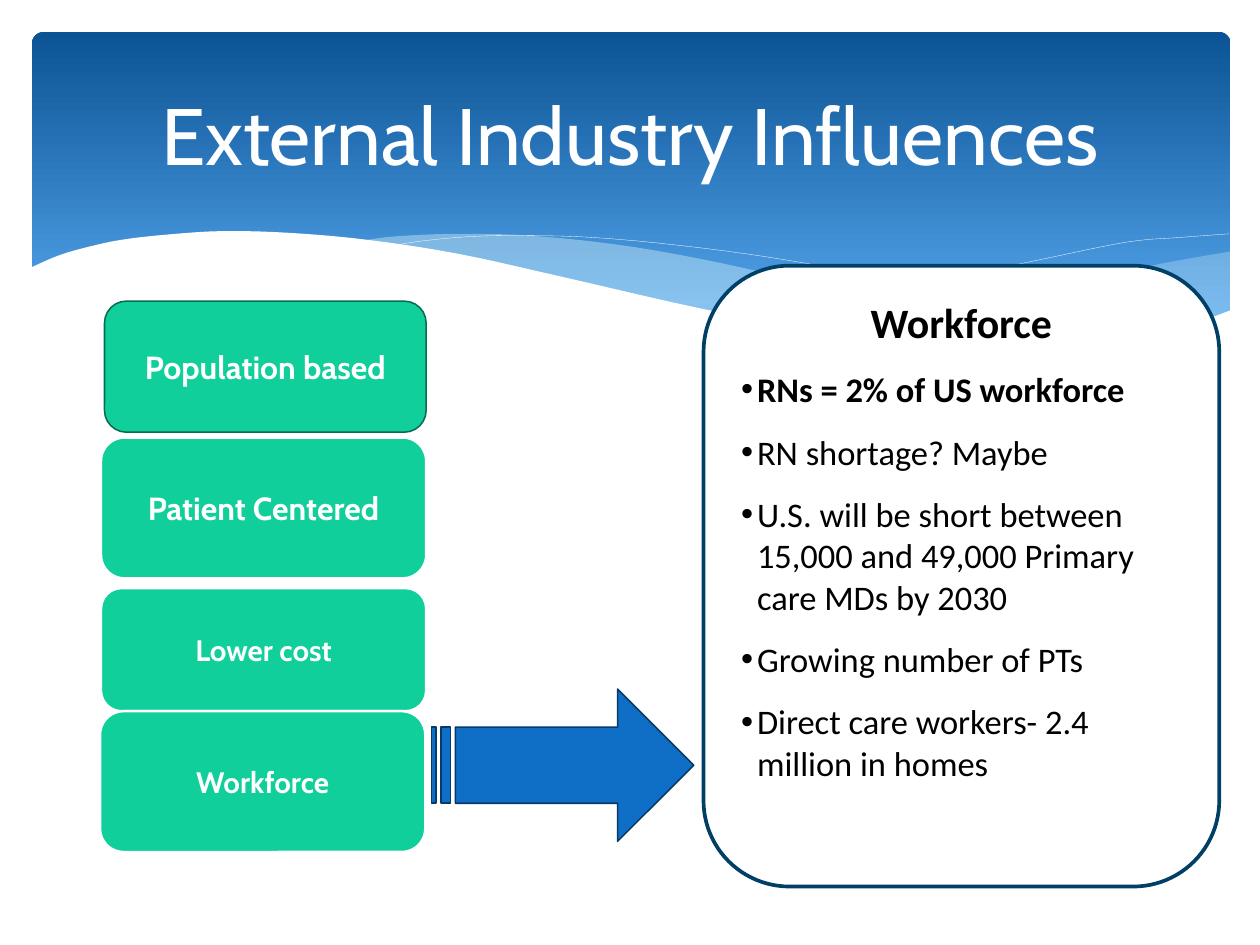
from dataclasses import dataclass

from lxml import etree
from pptx import Presentation
from pptx import util as u
from pptx.dml import color
from pptx.enum import shapes, text
from pptx.oxml import ns


@dataclass(frozen=True)
class Theme:
    heading_font: str = "Cabin"
    body_font: str = "Calibri"
    white: str = "FFFFFF"
    black: str = "000000"
    banner_top: str = "0B5394"
    banner_bottom: str = "59AAF2"
    wave: str = "DBF5F9"
    card: str = "10CF9B"
    card_edge: str = "086C51"
    arrow: str = "0F6FC6"
    arrow_edge: str = "083A67"
    panel_edge: str = "004067"
    title_size: float = 65
    panel_title_size: float = 34
    bullet_size: float = 28
    card_size: float = 26
    small_card_size: float = 24
    paragraph_gap: float = 17.1


THEME = Theme()
SHAPE = shapes.MSO_SHAPE
CENTER = text.PP_ALIGN.CENTER
MIDDLE = text.MSO_ANCHOR.MIDDLE
FRAME_FORMAT = {
    "word_wrap": True,
    "margin_left": u.Inches(0.14),
    "margin_right": u.Inches(0.14),
    "margin_top": u.Inches(0.07),
    "margin_bottom": u.Inches(0.07),
}

RIGHT_WAVE = [
    [(13.55, 0.23), (12.76, 0.37), (11.91, 0.56), (11.12, 0.76), (10.04, 0.99), (9.08, 1.16)],
    [(9.08, 1.16), (9.89, 1.27), (10.78, 1.33), (11.54, 1.33), (12.19, 1.28),
     (12.77, 1.19), (13.17, 1.08), (13.55, 0.9)],
]
MIDDLE_WAVE = [
    [(12.37, 1.27), (11.15, 1.09), (9.71, 0.8), (8.61, 0.54), (7.56, 0.31), (6.62, 0.15),
     (5.64, 0.05), (4.81, 0.03), (4.12, 0.06), (3.74, 0.11)],
    [(3.74, 0.11), (4.54, 0.22), (5.42, 0.39), (6.65, 0.68), (7.98, 0.97), (9.13, 1.18),
     (10.13, 1.3), (11.15, 1.35), (11.87, 1.33), (12.37, 1.27)],
]
LEFT_CREST = [
    [(4.07, 0.17), (4.44, 0.11), (5, 0.06), (5.59, 0.05), (6.34, 0.07), (7.24, 0.15),
     (8.32, 0.29), (9.56, 0.51), (10.98, 0.82), (12.57, 1.25)],
]
RIGHT_CREST = [
    [(8.39, 1.04), (9.23, 0.82), (10.3, 0.56), (11.56, 0.29), (12.41, 0.12), (13, 0.07),
     (13.54, 0.03)],
]
FRONT_WAVE = [
    [(13.57, 0.89), (13.04, 1.08), (12.45, 1.22), (11.76, 1.3), (10.95, 1.32), (10, 1.26),
     (8.88, 1.12), (7.56, 0.87), (6.03, 0.52), (4.86, 0.26), (3.83, 0.1), (2.94, 0.02),
     (2.18, 0), (1.55, 0.04), (1.03, 0.1), (0.62, 0.19), (0.32, 0.28), (0, 0.42)],
    [(0, 2.07), (13.57, 2.07)],
]


def apply(target, values):
    for name, value in values.items():
        setattr(target, name, value)


def rgb(value):
    return color.RGBColor.from_string(value)


def inches(box):
    return [u.Inches(length) for length in box]


def paint(shape, fill=None, line=None, width=0.25):
    shape.shadow.inherit = False
    if fill:
        shape.fill.solid()
        shape.fill.fore_color.rgb = rgb(fill)
    else:
        shape.fill.background()
    if line:
        shape.line.color.rgb = rgb(line)
        shape.line.width = u.Pt(width)
    else:
        shape.line.fill.background()


def add_box(slide, kind, box, **style):
    shape = slide.shapes.add_shape(kind, *inches(box))
    paint(shape, **style)
    return shape


def write(paragraph, words, font, size, ink, bold=False, **layout):
    apply(paragraph, layout)
    run = paragraph.add_run()
    run.text = words
    apply(run.font, {"name": font, "size": u.Pt(size), "bold": bold})
    run.font.color.rgb = rgb(ink)


def smooth(points, steps=5):
    padded = [points[0], *points, points[-1]]
    curve = [points[0]]
    for before, start, end, after in zip(padded, padded[1:], padded[2:], padded[3:]):
        for step in range(1, steps + 1):
            t = step / steps
            curve.append(tuple(
                (2 * b + (c - a) * t + (2 * a - 5 * b + 4 * c - d) * t ** 2
                 + (3 * b - a - 3 * c + d) * t ** 3) / 2
                for a, b, c, d in zip(before, start, end, after)))
    return curve


def add_wave(slide, box, sections, closed=True, opacity=None, **style):
    left, top = box[:2]
    points = [(u.Inches(left + x), u.Inches(top + y))
              for section in sections for x, y in smooth(section)]
    builder = slide.shapes.build_freeform(*points[0])
    builder.add_line_segments(points[1:], close=closed)
    shape = builder.convert_to_shape()
    paint(shape, **style)
    if opacity:
        tint = shape.fill._xPr.find(".//" + ns.qn("a:srgbClr"))
        etree.SubElement(tint, ns.qn("a:alpha"), val=str(opacity * 1000))


def add_banner(slide, box):
    left, top, width, height = box
    banner = add_box(slide, SHAPE.ROUNDED_RECTANGLE, box)
    banner.adjustments[0] = 0.034
    banner.fill.gradient()
    banner.fill.gradient_angle = 270
    stops = zip(banner.fill.gradient_stops, (0, 0.9), (THEME.banner_top, THEME.banner_bottom))
    for stop, position, shade in stops:
        stop.position = position
        stop.color.rgb = rgb(shade)

    waves = (left - 0.03, top + 2.25)
    add_wave(slide, waves, RIGHT_WAVE, fill=THEME.wave, opacity=29)
    add_wave(slide, waves, MIDDLE_WAVE, fill=THEME.wave, opacity=40)
    for crest in (LEFT_CREST, RIGHT_CREST):
        add_wave(slide, waves, crest, closed=False, line=THEME.white)
    add_wave(slide, waves, FRONT_WAVE, fill=THEME.white)

    title = slide.shapes.add_textbox(*inches((left + 0.35, top + 0.17, width - 0.73, 1.95)))
    frame = title.text_frame
    apply(frame, {**FRAME_FORMAT, "vertical_anchor": MIDDLE})
    write(frame.paragraphs[0], "External Industry Influences", THEME.heading_font,
          THEME.title_size, THEME.white, alignment=CENTER)


def add_bullet(paragraph):
    properties = paragraph._p.get_or_add_pPr()
    apply_indent = {"marL": u.Inches(0.18), "indent": u.Inches(-0.18)}
    for name, value in apply_indent.items():
        properties.set(name, str(value))
    etree.SubElement(properties, ns.qn("a:buFont"), typeface="Arial")
    etree.SubElement(properties, ns.qn("a:buChar"), char="•")


def add_workforce_panel(slide, box):
    panel = add_box(slide, SHAPE.ROUNDED_RECTANGLE, box,
                    fill=THEME.white, line=THEME.panel_edge, width=3)
    frame = panel.text_frame
    apply(frame, {**FRAME_FORMAT, "vertical_anchor": text.MSO_ANCHOR.TOP})
    gap = u.Pt(THEME.paragraph_gap)
    write(frame.paragraphs[0], "Workforce", THEME.body_font, THEME.panel_title_size,
          THEME.black, bold=True, alignment=CENTER, space_after=gap)
    facts = [
        ("RNs = 2% of US workforce", True),
        ("RN shortage? Maybe", False),
        ("U.S. will be short between 15,000 and 49,000 Primary care MDs by 2030", False),
        ("Growing number of PTs", False),
        ("Direct care workers- 2.4 million in homes", False),
    ]
    for fact, bold in facts:
        paragraph = frame.add_paragraph()
        write(paragraph, fact, THEME.body_font, THEME.bullet_size, THEME.black, bold=bold,
              alignment=text.PP_ALIGN.LEFT, space_after=gap)
        add_bullet(paragraph)


def add_influences(slide, box):
    left, top, width, _ = box
    plain = {"line": THEME.white, "width": 2}
    edged = {"line": THEME.card_edge, "width": 1.25}
    cards = [
        ("Lower cost", 0.01, 3.24, width, 1.39, THEME.small_card_size, plain),
        ("Workforce", 0, 4.63, width, 1.59, THEME.small_card_size, plain),
        ("Population based", 0.05, 0, width - 0.04, 1.48, THEME.card_size, edged),
        ("Patient Centered", 0.01, 1.54, width, 1.59, THEME.card_size, plain),
    ]
    for label, across, down, wide, high, size, edge in cards:
        card = add_box(slide, SHAPE.ROUNDED_RECTANGLE, (left + across, top + down, wide, high),
                       fill=THEME.card, **edge)
        apply(card.text_frame, {**FRAME_FORMAT, "vertical_anchor": MIDDLE})
        write(card.text_frame.paragraphs[0], label, THEME.heading_font, size, THEME.white,
              bold=True, alignment=CENTER)


def main():
    presentation = Presentation()
    apply(presentation, {"slide_width": u.Inches(14.22), "slide_height": u.Inches(10.67)})
    slide = presentation.slides.add_slide(presentation.slide_layouts[6])
    add_banner(slide, (0.36, 0.36, 13.53, 3.84))
    add_workforce_panel(slide, (7.94, 3, 5.82, 7.01))
    add_box(slide, SHAPE.STRIPED_RIGHT_ARROW, (4.87, 7.78, 2.96, 1.72),
            fill=THEME.arrow, line=THEME.arrow_edge, width=1.25)
    add_influences(slide, (1.13, 3.4, 3.67, 6.22))
    presentation.save("out.pptx")


if __name__ == "__main__":
    main()
